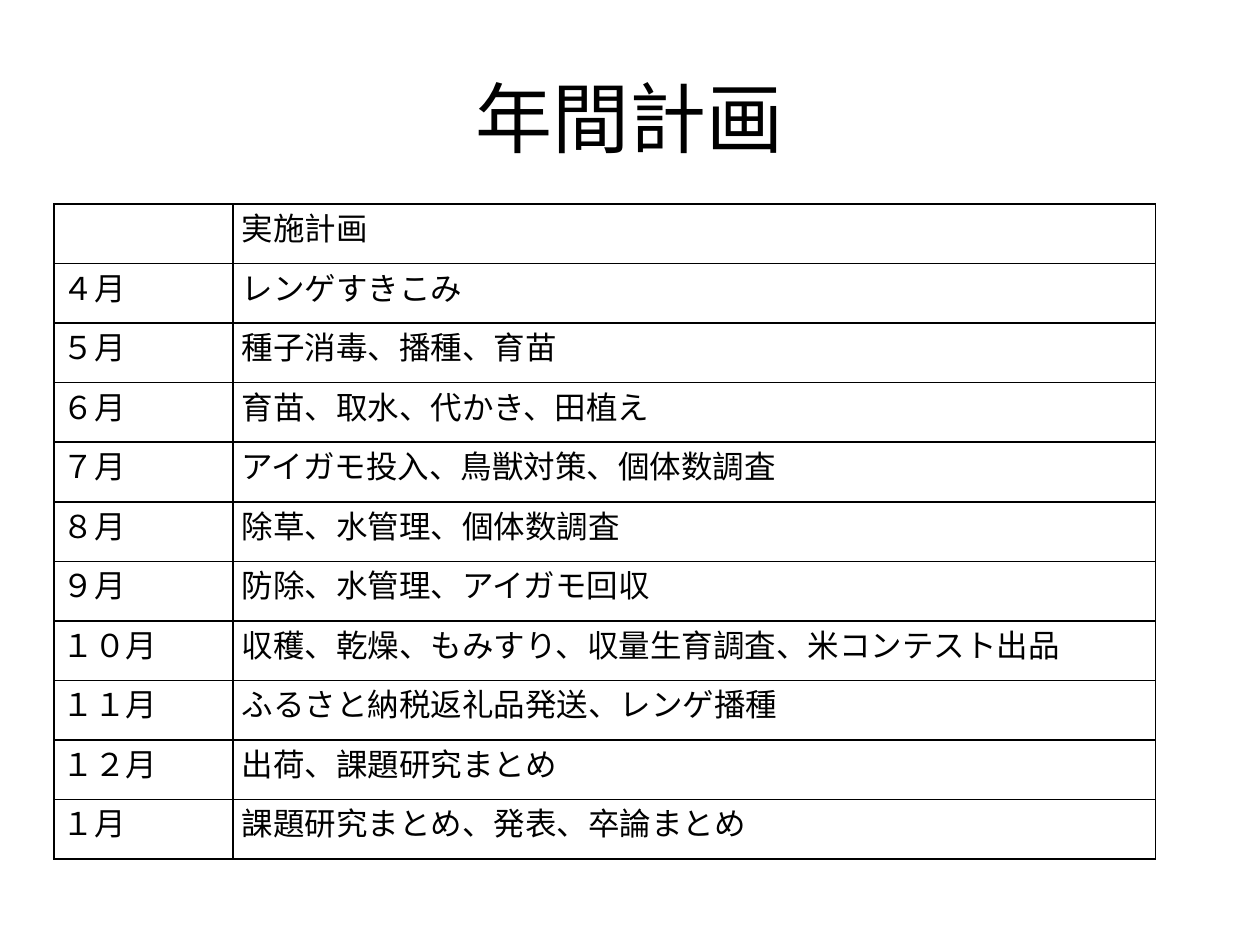
from lxml import etree
from pptx import Presentation
from pptx.dml.color import RGBColor
from pptx.enum.text import MSO_ANCHOR, PP_ALIGN
from pptx.oxml.ns import qn
from pptx.util import Inches, Pt

MIDDLE, TOP = MSO_ANCHOR.MIDDLE, MSO_ANCHOR.TOP
CENTER, JUSTIFY = PP_ALIGN.CENTER, PP_ALIGN.JUSTIFY

THEME = {
    "ink": RGBColor(0, 0, 0),
    "paper": RGBColor(255, 255, 255),
    "title": {"name": "Calibri", "size": Pt(44), "bold": False},
    "body": {"name": "Arial", "size": Pt(18), "bold": False},
    "line": Pt(1),
}
CELL = {
    "margin_left": Inches(0.07),
    "margin_right": Inches(0.07),
    "margin_top": 0,
    "margin_bottom": 0,
    "vertical_anchor": TOP,
}
PLAN = [
    ("", "実施計画"),
    ("４月", "レンゲすきこみ"),
    ("５月", "種子消毒、播種、育苗"),
    ("６月", "育苗、取水、代かき、田植え"),
    ("７月", "アイガモ投入、鳥獣対策、個体数調査"),
    ("８月", "除草、水管理、個体数調査"),
    ("９月", "防除、水管理、アイガモ回収"),
    ("１０月", "収穫、乾燥、もみすり、収量生育調査、米コンテスト出品"),
    ("１１月", "ふるさと納税返礼品発送、レンゲ播種"),
    ("１２月", "出荷、課題研究まとめ"),
    ("１月", "課題研究まとめ、発表、卒論まとめ"),
]
WIDTHS = [1.42, 7.32]
HEIGHT = 5.2


def write(frame, text, style, align):
    para = frame.paragraphs[0]
    para.text = text
    para.alignment = align
    for font in [para.font] + [run.font for run in para.runs]:
        for key, value in THEME[style].items():
            setattr(font, key, value)
        font.color.rgb = THEME["ink"]


def border(cell):
    props = cell._tc.get_or_add_tcPr()
    for spot, side in enumerate(("lnL", "lnR", "lnT", "lnB")):
        line = etree.Element(qn(f"a:{side}"), w=str(THEME["line"]))
        fill = etree.SubElement(line, qn("a:solidFill"))
        etree.SubElement(fill, qn("a:srgbClr"), val=str(THEME["ink"]))
        props.insert(spot, line)


deck = Presentation()
deck.slide_width, deck.slide_height = Inches(10), Inches(7.5)
slide = deck.slides.add_slide(deck.slide_layouts[6])

box = slide.shapes.add_textbox(Inches(0.5), Inches(0.3), Inches(9), Inches(1.25))
box.text_frame.word_wrap = True
box.text_frame.vertical_anchor = MIDDLE
write(box.text_frame, "年間計画", "title", CENTER)

table = slide.shapes.add_table(
    len(PLAN), len(WIDTHS), Inches(0.43), Inches(1.62),
    Inches(sum(WIDTHS)), Inches(HEIGHT),
).table
table.first_row = table.horz_banding = False
for col, width in zip(table.columns, WIDTHS):
    col.width = Inches(width)
for row, texts in zip(table.rows, PLAN):
    row.height = Inches(HEIGHT / len(PLAN))
    for cell, text in zip(row.cells, texts):
        for key, value in CELL.items():
            setattr(cell, key, value)
        cell.fill.solid()
        cell.fill.fore_color.rgb = THEME["paper"]
        write(cell.text_frame, text, "body", JUSTIFY)
        border(cell)

deck.save("out.pptx")
